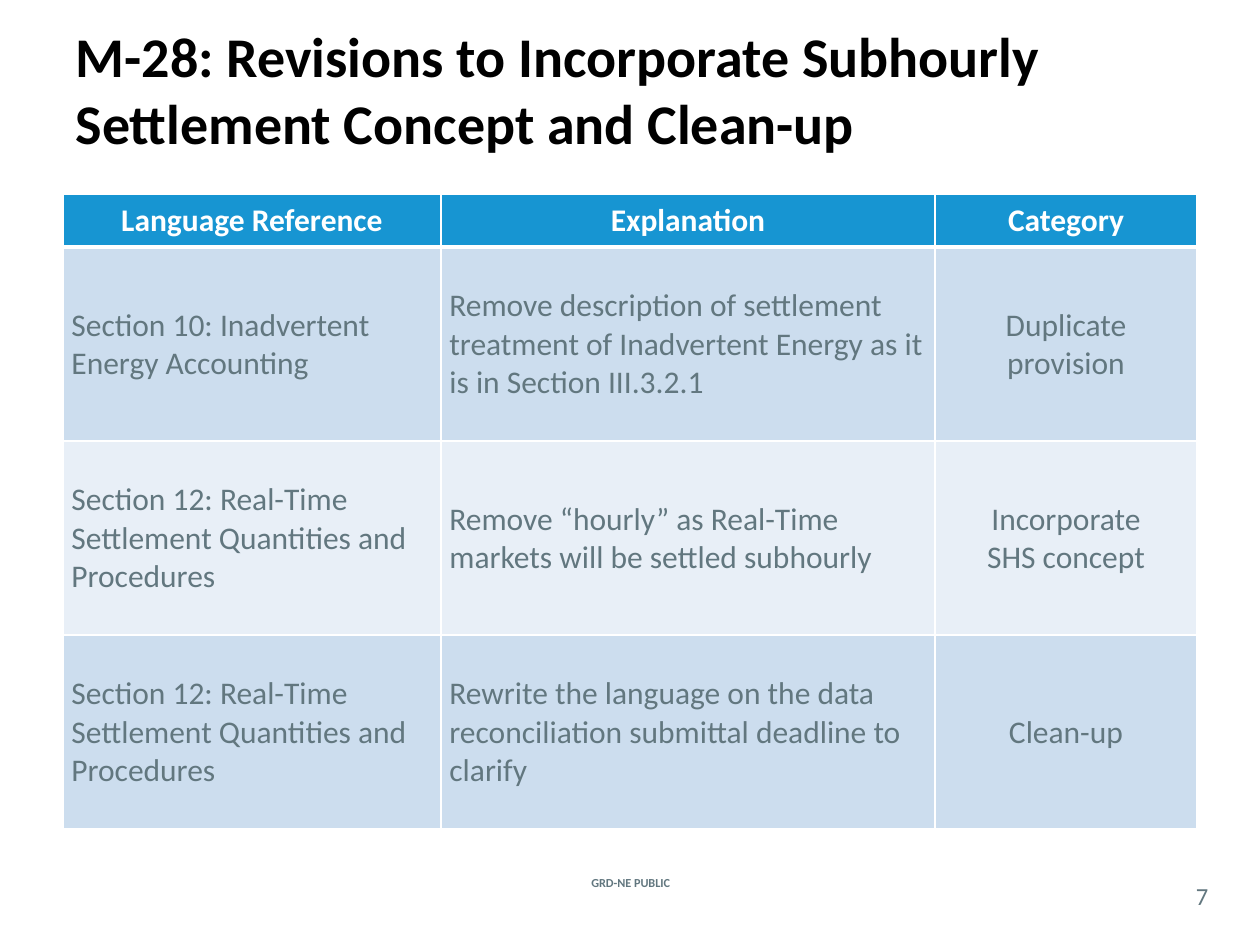
from lxml.etree import fromstring
from pptx import Presentation
from pptx.dml.color import RGBColor
from pptx.enum.text import MSO_ANCHOR, PP_ALIGN
from pptx.util import Cm, Pt

FONT = "Calibri"
BLUE, PALE, PALER = "1795D2", "CCDDEE", "E8EFF7"
GREY, WHITE, BLACK = "62777F", "FFFFFF", "000000"
NS = "http://schemas.openxmlformats.org/drawingml/2006/main"

HEADERS = ["Language Reference", "Explanation", "Category"]
ROWS = [
    ["Section 10: Inadvertent Energy Accounting",
     "Remove description of settlement treatment of Inadvertent Energy as it "
     "is in Section III.3.2.1",
     "Duplicate\nprovision"],
    ["Section 12: Real-Time Settlement Quantities and Procedures",
     "Remove “hourly” as Real-Time markets will be settled subhourly",
     "Incorporate\nSHS concept"],
    ["Section 12: Real-Time Settlement Quantities and Procedures",
     "Rewrite the language on the data reconciliation submittal deadline to "
     "clarify",
     "Clean-up"],
]
COL_WIDTHS = [7.62, 9.96, 5.28]
HEADER_HEIGHT, ROW_HEIGHT = 1.07, 3.91


def rgb(value):
    return RGBColor.from_string(value)


def write(tf, text, size=18, color=GREY, bold=False, align=PP_ALIGN.LEFT):
    """Fill a text frame, one paragraph per line of text."""
    tf.text = text
    tf.word_wrap = True
    for p in tf.paragraphs:
        p.alignment = align
        for r in p.runs:
            r.font.name = FONT
            r.font.size = Pt(size)
            r.font.bold = bold
            r.font.color.rgb = rgb(color)


def add_label(slide, text, left, top, width, height, **fmt):
    tf = slide.shapes.add_textbox(
        Cm(left), Cm(top), Cm(width), Cm(height)).text_frame
    tf.margin_left = tf.margin_right = tf.margin_top = tf.margin_bottom = 0
    tf.vertical_anchor = MSO_ANCHOR.MIDDLE
    write(tf, text, align=PP_ALIGN.CENTER, **fmt)


def set_borders(cell, top=1, bottom=1):
    """White borders; the line elements go ahead of the cell fill."""
    widths = {"lnL": 1, "lnR": 1, "lnT": top, "lnB": bottom}
    for i, (tag, width) in enumerate(widths.items()):
        cell._tc.get_or_add_tcPr().insert(i, fromstring(
            f'<a:{tag} xmlns:a="{NS}" w="{Pt(width)}"><a:solidFill>'
            f'<a:srgbClr val="{WHITE}"/></a:solidFill></a:{tag}>'))


def fill_cell(cell, text, fill, **fmt):
    cell.fill.solid()
    cell.fill.fore_color.rgb = rgb(fill)
    cell.vertical_anchor = MSO_ANCHOR.MIDDLE
    write(cell.text_frame, text, **fmt)


def add_revision_table(slide):
    height = HEADER_HEIGHT + ROW_HEIGHT * len(ROWS)
    table = slide.shapes.add_table(
        len(ROWS) + 1, len(HEADERS), Cm(1.27), Cm(3.91),
        Cm(sum(COL_WIDTHS)), Cm(height)).table
    for column, width in zip(table.columns, COL_WIDTHS):
        column.width = Cm(width)

    # Header row, with a heavier line beneath it
    table.rows[0].height = Cm(HEADER_HEIGHT)
    for c, text in enumerate(HEADERS):
        cell = table.cell(0, c)
        fill_cell(cell, text, BLUE, color=WHITE, bold=True,
                  align=PP_ALIGN.CENTER)
        set_borders(cell, bottom=3)

    # Body rows in alternating tints, last column centred
    for n, row in enumerate(ROWS, start=1):
        table.rows[n].height = Cm(ROW_HEIGHT)
        for c, text in enumerate(row):
            cell = table.cell(n, c)
            centred = c == len(row) - 1
            fill_cell(cell, text, PALE if n % 2 else PALER,
                      align=PP_ALIGN.CENTER if centred else PP_ALIGN.LEFT)
            cell.margin_left = Cm(0.02 if centred else 0.17)
            cell.margin_right = cell.margin_top = Cm(0.02)
            cell.margin_bottom = 0
            set_borders(cell, top=3 if n == 1 else 1)


def add_title(slide, text):
    sp = slide.shapes.title
    sp.left, sp.top, sp.width, sp.height = Cm(1.27), Cm(0.2), Cm(22.86), Cm(3.18)
    sp.text_frame.vertical_anchor = MSO_ANCHOR.MIDDLE
    write(sp.text_frame, text, size=32, color=BLACK, bold=True)


def main():
    prs = Presentation()
    prs.slide_width, prs.slide_height = Cm(25.4), Cm(19.05)
    s = prs.slides.add_slide(prs.slide_layouts[5])
    add_title(s, "M-28: Revisions to Incorporate Subhourly Settlement Concept "
                 "and Clean-up")
    add_revision_table(s)
    # Footer: classification and page number
    add_label(s, "GRD-NE PUBLIC", 10.85, 17.58, 3.73, 0.43, size=7, bold=True)
    add_label(s, "7", 23.7, 17.68, 1.07, 0.74, size=14)
    prs.save("out.pptx")


if __name__ == "__main__":
    main()
